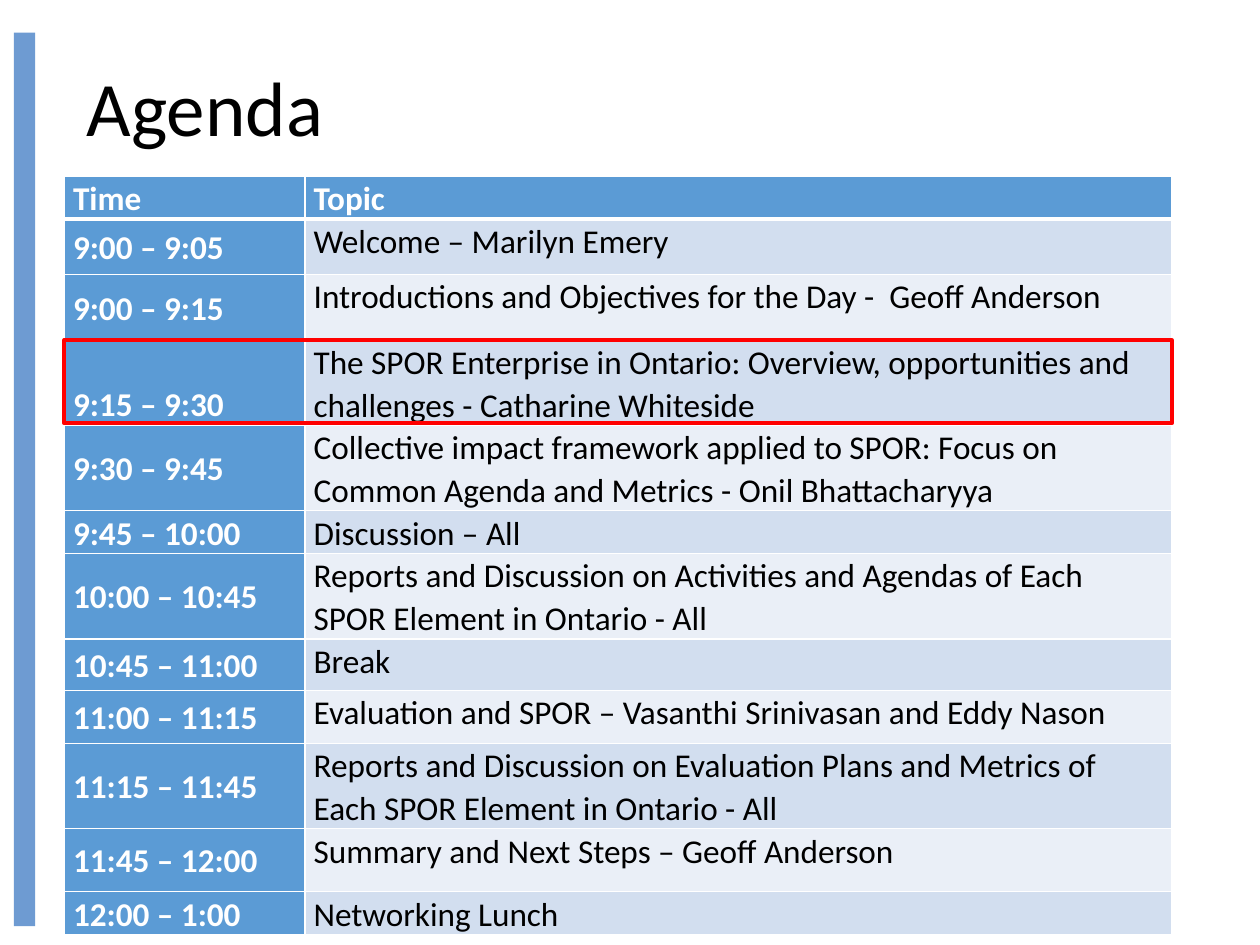
"""Build the agenda slide with its timetable and highlighted session."""
from lxml.etree import SubElement
from pptx import Presentation
from pptx.dml.color import RGBColor
from pptx.enum.shapes import MSO_SHAPE as Shape
from pptx.enum.text import MSO_ANCHOR as Anchor
from pptx.oxml.ns import qn
from pptx.util import Inches, Pt

WHITE, BLACK, BLUE = "FFFFFF", "000000", "5B9BD5"
BANDS = ["D2DEEF", "EAEFF7"]
COLUMNS = [1.91, 6.88]
LEFT, TOP, WIDTH = 0.51, 1.4, sum(COLUMNS)
HIGHLIGHTED = 3
AGENDA = [
    (0.33, "Time", "Topic"),
    (0.44, "9:00 – 9:05", "Welcome – Marilyn Emery"),
    (0.52, "9:00 – 9:15", "Introductions and Objectives for the Day -  Geoff Anderson"),
    (0.66, "9:15 – 9:30", "The SPOR Enterprise in Ontario: Overview, opportunities and challenges - Catharine Whiteside"),
    (0.66, "9:30 – 9:45", "Collective impact framework applied to SPOR: Focus on Common Agenda and Metrics - Onil Bhattacharyya"),
    (0.33, "9:45 – 10:00", "Discussion – All"),
    (0.66, "10:00 – 10:45", "Reports and Discussion on Activities and Agendas of Each SPOR Element in Ontario - All"),
    (0.41, "10:45 – 11:00", "Break"),
    (0.42, "11:00 – 11:15", "Evaluation and SPOR – Vasanthi Srinivasan and Eddy Nason"),
    (0.66, "11:15 – 11:45", "Reports and Discussion on Evaluation Plans and Metrics of Each SPOR Element in Ontario - All"),
    (0.5, "11:45 – 12:00", "Summary and Next Steps – Geoff Anderson"),
    (0.33, "12:00 – 1:00", "Networking Lunch"),
]


def color(value):
    return RGBColor.from_string(value)


def write(frame, text, size=19, ink=BLACK, bold=False, spacing=1.07):
    frame.word_wrap = True
    para = frame.paragraphs[0]
    para.line_spacing = spacing
    span = para.add_run()
    span.text = text
    span.font.name = "Calibri"
    span.font.size = Pt(size)
    span.font.bold = bold
    span.font.color.rgb = color(ink)


deck = Presentation()
deck.slide_width, deck.slide_height = Inches(10), Inches(7.5)
page = deck.slides.add_slide(deck.slide_layouts[6])

bar = page.shapes.add_shape(Shape.RECTANGLE, Inches(0.11), Inches(0.26), Inches(0.17), Inches(7.09))
bar.shadow.inherit = False
bar.fill.solid()
bar.fill.fore_color.rgb = color("6E9BD2")
bar.line.fill.background()

title = page.shapes.add_textbox(Inches(0.59), Inches(0.16), Inches(8.62), Inches(1.45))
title.text_frame.vertical_anchor = Anchor.MIDDLE
write(title.text_frame, "Agenda", size=44, spacing=0.9)

height = sum(entry[0] for entry in AGENDA)
table = page.shapes.add_table(
    len(AGENDA), len(COLUMNS), Inches(LEFT), Inches(TOP), Inches(WIDTH), Inches(height)
).table
for column, width in zip(table.columns, COLUMNS):
    column.width = Inches(width)

for row, (row_height, *texts) in enumerate(AGENDA):
    table.rows[row].height = Inches(row_height)
    for col, text in enumerate(texts):
        cell = table.cell(row, col)
        cell.margin_left = cell.margin_right = Inches(0.07)
        cell.margin_top = cell.margin_bottom = 0
        heading = row == 0 or col == 0
        write(cell.text_frame, text, ink=WHITE if heading else BLACK, bold=heading)
        if row == HIGHLIGHTED:
            cell.vertical_anchor = Anchor.MIDDLE if col else Anchor.BOTTOM
        elif row and col == 0 and row_height > 0.33:
            cell.vertical_anchor = Anchor.MIDDLE
        for side in ("L", "R", "T", "B"):
            thick = (row == 0 and side == "B") or (row == 1 and side == "T")
            border = SubElement(cell._tc.get_or_add_tcPr(), qn(f"a:ln{side}"), w=str(Pt(3 if thick else 1)))
            SubElement(SubElement(border, qn("a:solidFill")), qn("a:srgbClr"), val=WHITE)
        cell.fill.solid()
        cell.fill.fore_color.rgb = color(BLUE if heading else BANDS[(row - 1) % 2])

frame = page.shapes.add_shape(Shape.RECTANGLE, Inches(LEFT), Inches(2.7), Inches(WIDTH), Inches(0.66))
frame.shadow.inherit = False
frame.fill.background()
frame.line.color.rgb = color("FF0000")
frame.line.width = Pt(2.25)

deck.save("out.pptx")
